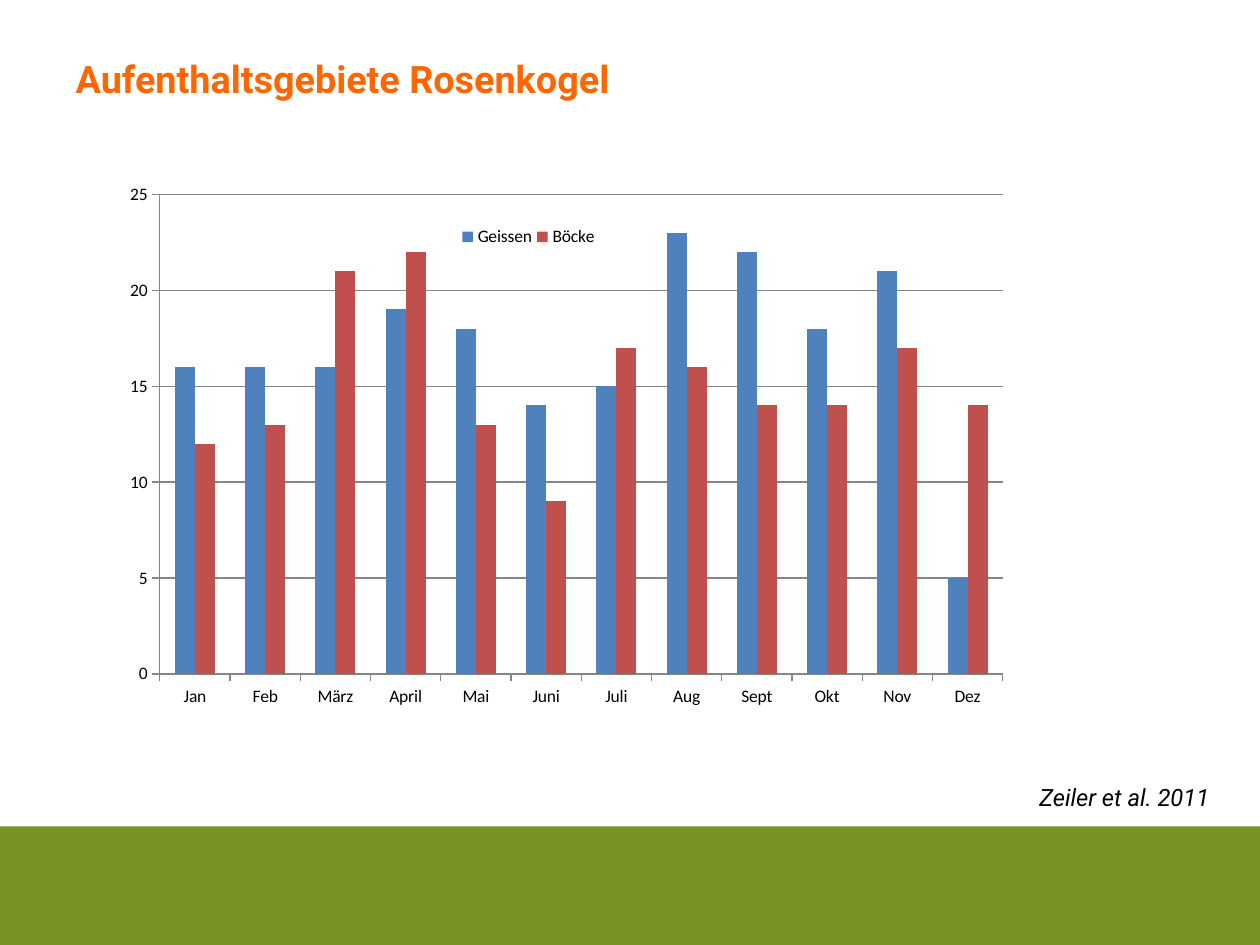
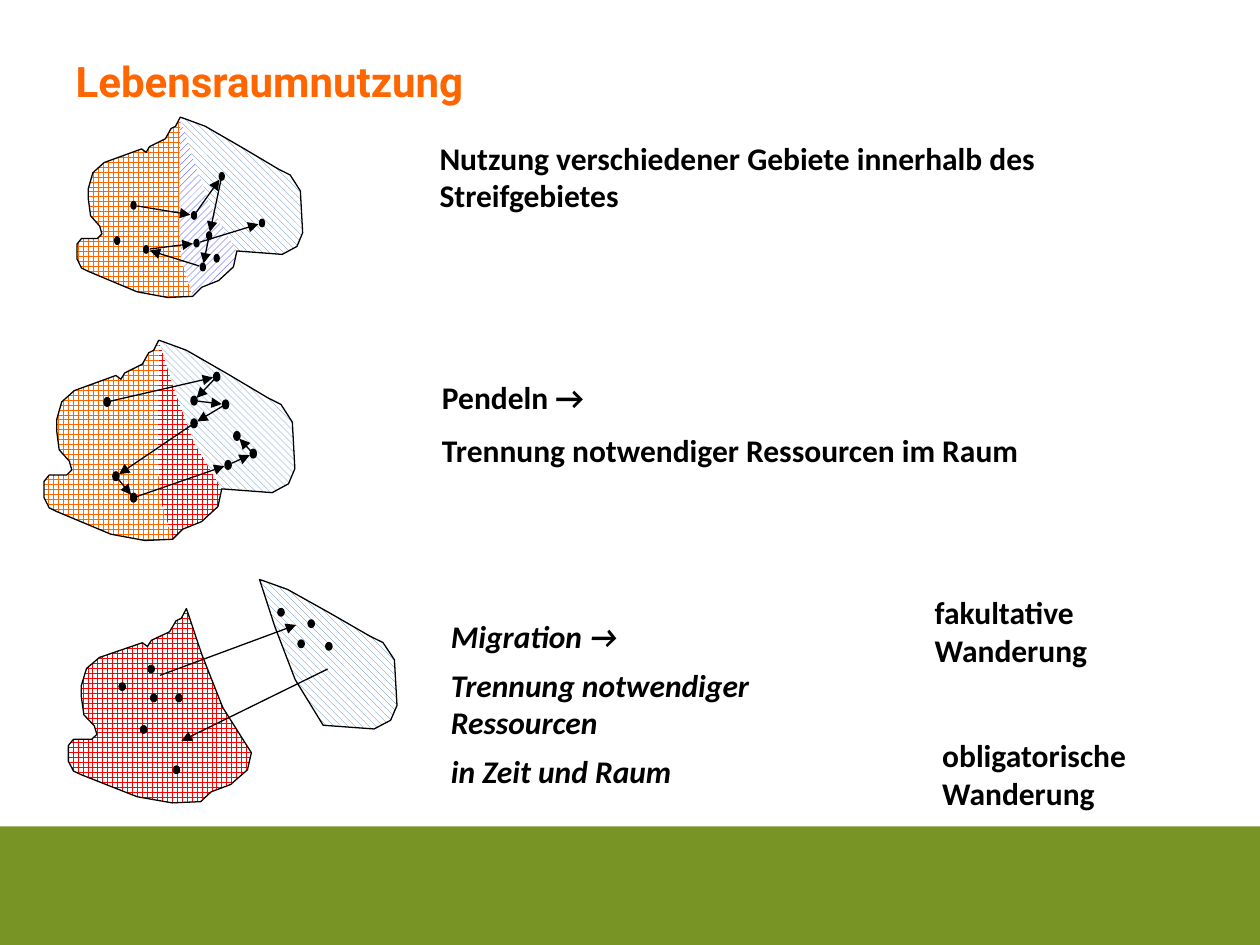
from dataclasses import dataclass
from itertools import pairwise
from math import dist

from lxml import etree
from pptx import Presentation
from pptx.chart.data import CategoryChartData
from pptx.dml.color import RGBColor
from pptx.enum.chart import XL_CHART_TYPE, XL_LEGEND_POSITION, XL_TICK_MARK
from pptx.enum.dml import MSO_PATTERN
from pptx.enum.shapes import MSO_CONNECTOR, MSO_SHAPE
from pptx.enum.text import MSO_ANCHOR, MSO_AUTO_SIZE, PP_ALIGN
from pptx.oxml.ns import qn
from pptx.util import Inches, Pt

COLUMNS = XL_CHART_TYPE.COLUMN_CLUSTERED
RIGHT = XL_LEGEND_POSITION.RIGHT
OUTSIDE = XL_TICK_MARK.OUTSIDE
GRID = MSO_PATTERN.LARGE_GRID
DOWN = MSO_PATTERN.WIDE_DOWNWARD_DIAGONAL
UP = MSO_PATTERN.WIDE_UPWARD_DIAGONAL
STRAIGHT = MSO_CONNECTOR.STRAIGHT
RECTANGLE, OVAL = MSO_SHAPE.RECTANGLE, MSO_SHAPE.OVAL
TOP, LEFT = MSO_ANCHOR.TOP, PP_ALIGN.LEFT
NO_AUTOFIT = MSO_AUTO_SIZE.NONE


@dataclass(frozen=True)
class Theme:
    band: RGBColor = RGBColor(0x78, 0x94, 0x24)
    orange: RGBColor = RGBColor(0xFF, 0x66, 0x00)
    red: RGBColor = RGBColor(0xFF, 0x00, 0x00)
    violet: RGBColor = RGBColor(0x00, 0x00, 0xFF)
    blue: RGBColor = RGBColor(0x4F, 0x81, 0xBD)
    brick: RGBColor = RGBColor(0xC0, 0x50, 0x4D)
    black: RGBColor = RGBColor(0x00, 0x00, 0x00)
    white: RGBColor = RGBColor(0xFF, 0xFF, 0xFF)
    grey: RGBColor = RGBColor(0x86, 0x86, 0x86)
    heading: str = "Roboto"
    body: str = "Calibri"
    caption_size: Pt = Pt(18)
    source_size: Pt = Pt(13.6)
    chart_size: Pt = Pt(10)
    thin: Pt = Pt(0.75)


theme = Theme()


def add_text(s, box, lines, name, size, bold=False, italic=False, gap=0):
    tf = s.shapes.add_textbox(*map(Inches, box)).text_frame
    tf.word_wrap = True
    for i, line in enumerate(lines):
        p = tf.paragraphs[0] if i == 0 else tf.add_paragraph()
        p.text = line
        p.space_before = Pt(gap if i else 0)
        p.font.name, p.font.size = name, size
        p.font.bold, p.font.italic = bold, italic
        p.font.color.rgb = theme.black
    return tf


def add_patch(s, outline, apex, scale, pattern=None, color=None, bordered=False):
    """Draw an outline given relative to its apex, stretched by scale (x, y)."""
    start, *rest = [(Inches(apex[0] + x * scale[0]), Inches(apex[1] + y * scale[1]))
                    for x, y in outline]
    builder = s.shapes.build_freeform(*start, scale=1.0)
    builder.add_line_segments(rest, close=True)
    sp = builder.convert_to_shape()
    sp.shadow.inherit = False
    if pattern is None:
        sp.fill.background()
    else:
        sp.fill.patterned()
        sp.fill.pattern = pattern
        sp.fill.fore_color.rgb = color
        sp.fill.back_color.rgb = theme.white
    if bordered:
        sp.line.color.rgb = theme.black
        sp.line.width = theme.thin
    else:
        sp.line.fill.background()


prs = Presentation()
prs.slide_width, prs.slide_height = Inches(10), Inches(7.5)

# Titles
slides = []
for title, size in (("Aufenthaltsgebiete Rosenkogel", 21.6), ("Lebensraumnutzung", 24)):
    s = prs.slides.add_slide(prs.slide_layouts[5])
    sp = s.shapes.title
    sp.left, sp.top, sp.width, sp.height = map(Inches, (0.5, 0.39, 9, 0.78))
    tf = sp.text_frame
    tf.text = title
    tf.auto_size = NO_AUTOFIT
    tf.vertical_anchor = TOP
    tf.margin_top = Inches(0.05)
    p = tf.paragraphs[0]
    p.alignment = LEFT
    p.font.name, p.font.size, p.font.bold = theme.heading, Pt(size), True
    p.font.color.rgb = theme.orange
    slides.append(s)
months_slide, habitat_slide = slides

# Footer band, moved to the master so that every slide shows it
band = months_slide.shapes.add_shape(RECTANGLE, 0, Inches(6.56), Inches(10), Inches(0.94))
band.shadow.inherit = False
band.fill.solid()
band.fill.fore_color.rgb = theme.band
band.line.fill.background()
prs.slide_master.shapes.element.insert(2, band.element)

# Slide 1: monthly chart
data = CategoryChartData()
data.categories = ["Jan", "Feb", "März", "April", "Mai", "Juni",
                   "Juli", "Aug", "Sept", "Okt", "Nov", "Dez"]
data.add_series("Geissen", (16, 16, 16, 19, 18, 14, 15, 23, 22, 18, 21, 5))
data.add_series("Böcke", (12, 13, 21, 22, 13, 9, 17, 16, 14, 14, 17, 14))
chart = months_slide.shapes.add_chart(
    COLUMNS, *map(Inches, (0.83, 1.31, 7.56, 4.57)), data).chart
chart.has_title = False
chart.font.name, chart.font.size = theme.body, theme.chart_size
chart.font.color.rgb = theme.black
chart.has_legend = True
chart.legend.position = RIGHT
chart.legend.include_in_layout = False
plot = chart.plots[0]
plot.gap_width, plot.overlap, plot.vary_by_categories = 150, 0, False
for series, color in zip(plot.series, (theme.blue, theme.brick)):
    series.format.fill.solid()
    series.format.fill.fore_color.rgb = color
values = chart.value_axis
values.minimum_scale, values.maximum_scale, values.major_unit = 0, 25, 5
values.has_major_gridlines = True
for axis in (values, chart.category_axis):
    axis.major_tick_mark = OUTSIDE
for part in (values, chart.category_axis, values.major_gridlines):
    part.format.line.color.rgb = theme.grey
    part.format.line.width = theme.thin

# Fixed places for the plot and the legend, as fractions of the chart
for tag, index, place in (("c:plotArea", 0, (0.058, 0.051, 0.885, 0.833)),
                          ("c:legend", 1, (0.37, 0.09, 0.15, 0.07))):
    parent = chart.element.find(".//" + qn(tag))
    for old in parent.findall(qn("c:layout")):
        parent.remove(old)
    layout = etree.Element(qn("c:layout"))
    manual = etree.SubElement(layout, qn("c:manualLayout"))
    settings = [("xMode", "edge"), ("yMode", "edge"), *zip("xywh", place)]
    if tag == "c:plotArea":
        settings.insert(0, ("layoutTarget", "inner"))
    for key, value in settings:
        etree.SubElement(manual, qn("c:" + key)).set("val", str(value))
    parent.insert(index, layout)

tf = add_text(months_slide, (8.15, 6.19, 1.73, 0.47), ["Zeiler et al. 2011"],
              theme.heading, theme.source_size, italic=True)
tf.paragraphs[0].line_spacing = 0.9

# Slide 2: captions (box, lines, italic, gap)
captions = [
    ((3.39, 1.05, 5.5, 0.71),
     ["Nutzung verschiedener Gebiete innerhalb des Streifgebietes"], False, 0),
    ((3.41, 2.95, 5.2, 0.77),
     ["Pendeln →", "Trennung notwendiger Ressourcen im Raum"], False, 8.5),
    ((3.48, 4.85, 3.51, 1.48),
     ["Migration →", "Trennung notwendiger Ressourcen", "in Zeit und Raum"], True, 6),
    ((7.32, 4.66, 1.58, 0.71), ["fakultative", "Wanderung"], False, 0),
    ((7.38, 5.79, 2, 0.71), ["obligatorische", "Wanderung"], False, 0),
]
for box, lines, italic, gap in captions:
    add_text(habitat_slide, box, lines, theme.body, theme.caption_size, True, italic, gap)

# One home range serves all drawings. Its shores run anticlockwise from the apex
# (west to the south tip, south to the notch, east back to the apex);
# two dividers lead from the south tip and from the notch up to the apex.
apex, south_tip, notch = (0, 0), (0.11, 1.58), (0.5, 1.18)
west_shore = [(-0.04, 0.08), (-0.08, 0.1), (-0.13, 0.19), (-0.27, 0.26), (-0.3, 0.31),
              (-0.34, 0.28), (-0.67, 0.4), (-0.77, 0.49), (-0.81, 0.63), (-0.81, 0.72),
              (-0.79, 0.87), (-0.71, 0.96), (-0.69, 1.03), (-0.73, 1.07), (-0.87, 1.07),
              (-0.91, 1.12), (-0.91, 1.25), (-0.87, 1.33), (-0.81, 1.36), (-0.38, 1.54),
              (-0.11, 1.59)]
south_shore = [(0.19, 1.5), (0.34, 1.44), (0.47, 1.32)]
east_shore = [(0.9, 1.21), (1.03, 1.14), (1.08, 1.02), (1.06, 0.65), (0.97, 0.51),
              (0.87, 0.46), (0.55, 0.27), (0.22, 0.08), (0.03, 0.01)]
west_divider = [(0.01, 1.26), (-0.01, 0.9)]
east_divider = [(0.28, 0.81), (0.12, 0.38)]

west = [apex, *west_shore, south_tip, *west_divider]
strip = [apex, *reversed(west_divider), south_tip, *south_shore, notch, *east_divider]
east = [apex, *reversed(east_divider), notch, *east_shore]
west_and_strip = [apex, *west_shore, south_tip, *south_shore, notch, *east_divider]
whole = [apex, *west_shore, south_tip, *south_shore, notch, *east_shore]

# Use within one range, and commuting: the whole range in three parts
for place, scale, strip_pattern, strip_color in (
        ((1.43, 0.93), (0.9, 0.9), UP, theme.violet),
        ((1.26, 2.7), (1, 1), GRID, theme.red)):
    add_patch(habitat_slide, strip, place, scale, strip_pattern, strip_color)
    add_patch(habitat_slide, west, place, scale, GRID, theme.orange)
    add_patch(habitat_slide, east, place, scale, DOWN, theme.blue)
    add_patch(habitat_slide, whole, place, scale, bordered=True)

# Migration: the east part has moved away from the rest
add_patch(habitat_slide, west_and_strip, (1.48, 4.83), (1.03, 0.97), GRID, theme.red, True)
add_patch(habitat_slide, east, (2.06, 4.6), (1.01, 0.98), DOWN, theme.blue, True)

# Dot centres: a track is walked from dot to dot, the other dots stand alone
use_track = [(1.06, 1.63), (1.54, 1.71), (1.76, 1.4), (1.66, 1.87),
             (1.61, 2.12), (1.16, 1.98), (1.56, 1.93), (2.08, 1.77)]
use_others = [(1.72, 2.05), (0.93, 1.91)]
commuting_track = [(0.85, 3.19), (1.72, 2.99), (1.54, 3.18), (1.79, 3.21), (1.54, 3.36),
                   (0.92, 3.78), (1.06, 3.95), (1.81, 3.69), (2.01, 3.6), (1.88, 3.46)]
summer_dots = [(1.22, 5.54), (0.97, 5.45), (1.14, 5.79), (1.4, 6.11), (1.42, 5.54),
               (1.2, 5.31)]
winter_dots = [(2.47, 4.95), (2.39, 5.11), (2.61, 5.13), (2.23, 4.86)]

for width, height, dots in ((0.04, 0.06, use_track + use_others),
                            (0.05, 0.07, commuting_track),
                            (0.05, 0.06, summer_dots + winter_dots)):
    for x, y in dots:
        box = (x - width / 2, y - height / 2, width, height)
        sp = habitat_slide.shapes.add_shape(OVAL, *map(Inches, box))
        sp.shadow.inherit = False
        sp.fill.solid()
        sp.fill.fore_color.rgb = theme.black
        sp.line.color.rgb = theme.black
        sp.line.width = theme.thin

# Arrows: each step of a track, kept clear of its dots, and the two migrations
clearance = 0.03
arrows = [((1.27, 5.36), (2.35, 4.96)), ((2.6, 5.31), (1.44, 5.88))]
for start, end in [*pairwise(use_track), *pairwise(commuting_track)]:
    cut = clearance / dist(start, end)
    dx, dy = (end[0] - start[0]) * cut, (end[1] - start[1]) * cut
    arrows.append(((start[0] + dx, start[1] + dy), (end[0] - dx, end[1] - dy)))
for start, end in arrows:
    arrow = habitat_slide.shapes.add_connector(STRAIGHT, *map(Inches, start + end))
    arrow.line.color.rgb = theme.black
    arrow.line.width = theme.thin
    spPr = arrow.element.spPr
    etree.SubElement(spPr.find(qn("a:ln")), qn("a:tailEnd")).set("type", "triangle")
    etree.SubElement(spPr, qn("a:effectLst"))

prs.save("out.pptx")
